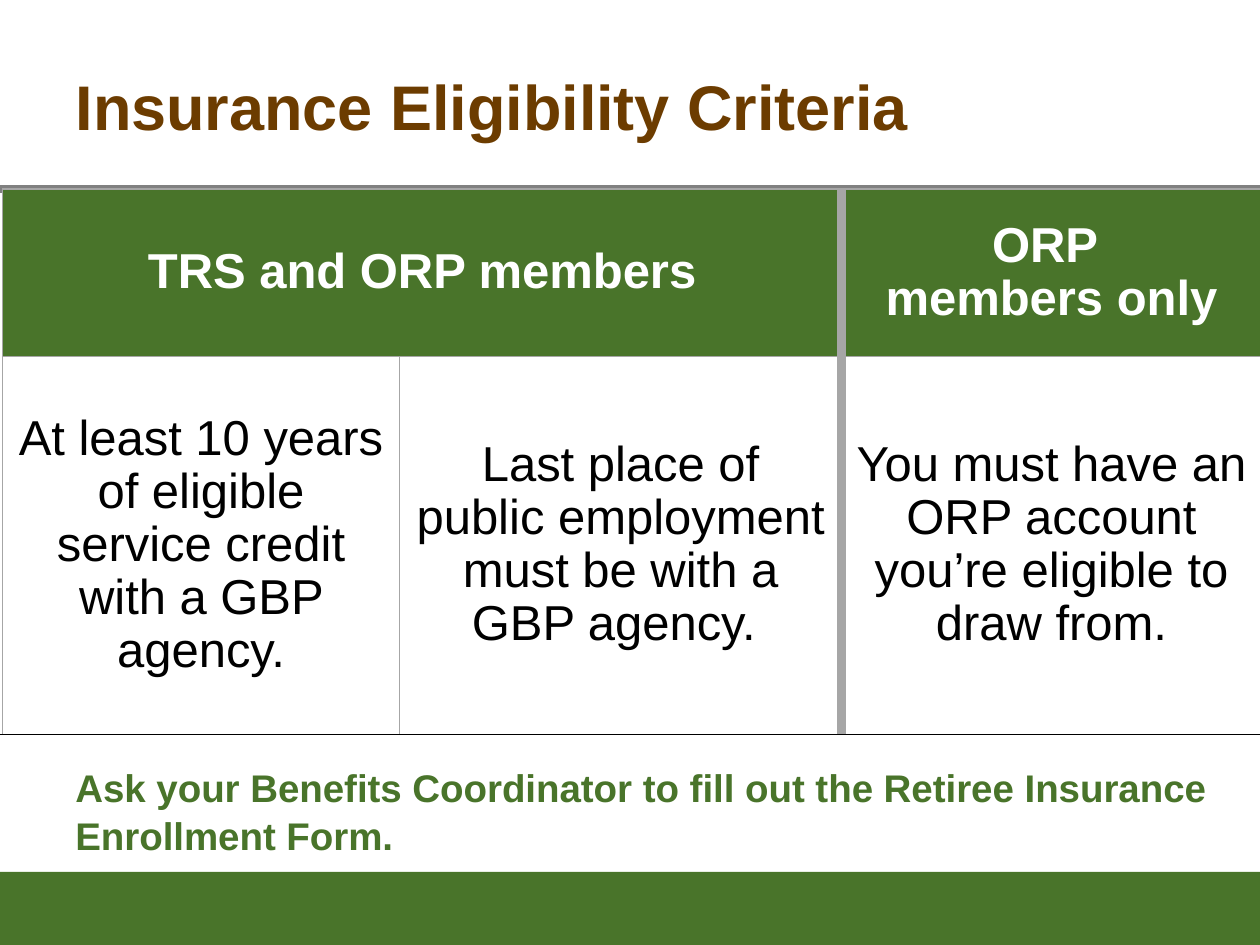
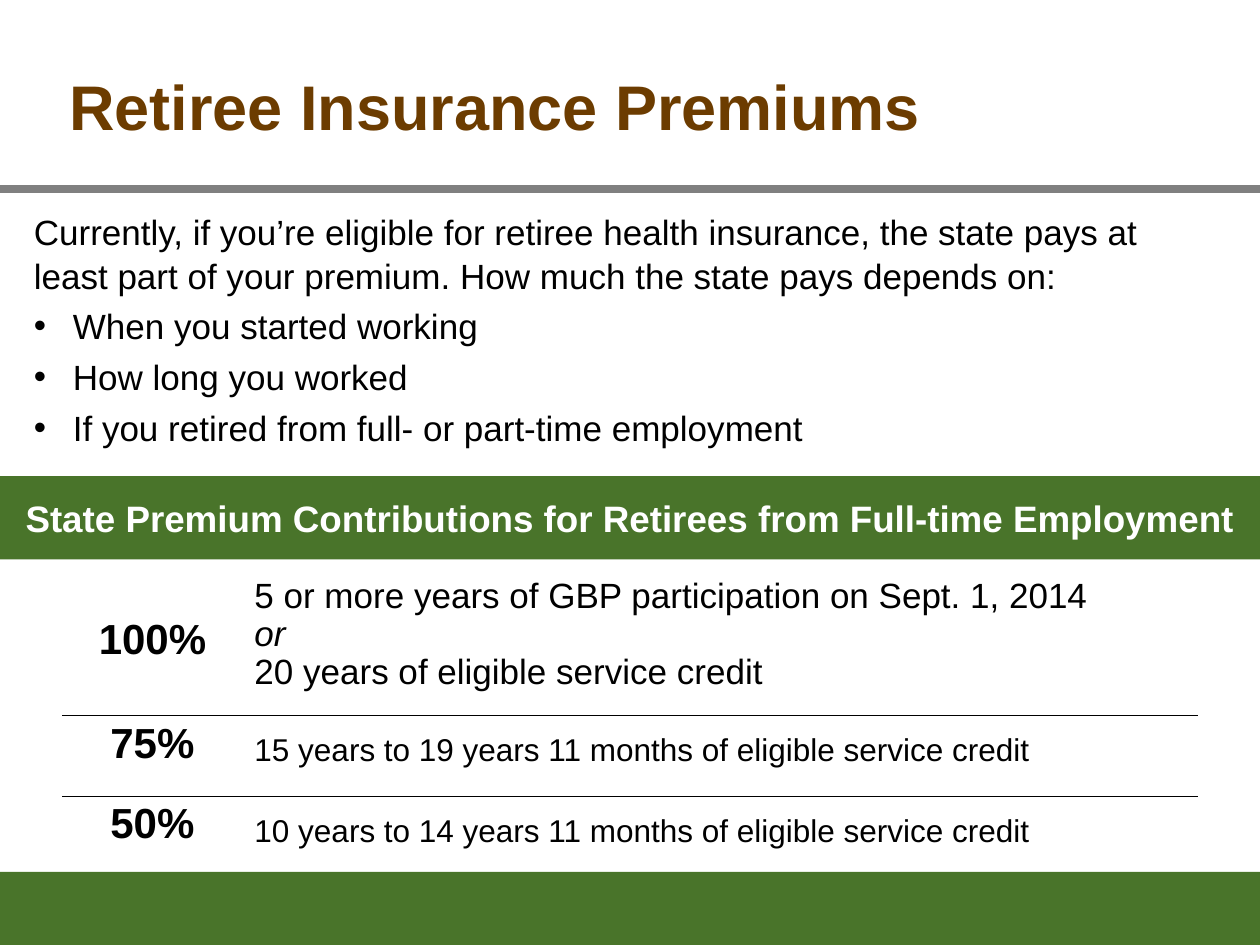
from lxml import etree
from pptx import Presentation
from pptx.dml.color import RGBColor
from pptx.enum.shapes import MSO_CONNECTOR, MSO_SHAPE
from pptx.enum.text import MSO_ANCHOR, MSO_AUTO_SIZE, PP_ALIGN
from pptx.oxml.ns import qn
from pptx.util import Inches, Pt

LEFT, CENTER = PP_ALIGN.LEFT, PP_ALIGN.CENTER
TOP, MIDDLE = MSO_ANCHOR.TOP, MSO_ANCHOR.MIDDLE
NO_FIT = MSO_AUTO_SIZE.NONE
RECTANGLE = MSO_SHAPE.RECTANGLE
STRAIGHT = MSO_CONNECTOR.STRAIGHT

FONT = "Arial"
GREEN, BROWN = "49742A", "6C3C00"
BLACK, WHITE = "000000", "FFFFFF"
RULE_GRAY, GRID_GRAY = "808080", "A6A6A6"
SLIDE_WIDTH, SLIDE_HEIGHT = 10, 7.5
FOOTER_TOP, HEADER_RULE_TOP = 6.92, 1.5
BODY_SPACING, TABLE_SPACING = 1.04, 0.97
BULLET_INDENT = 0.31


def color(value):
    return RGBColor.from_string(value)


def add_run(paragraph, text, size, shade, bold=False, italic=False):
    run = paragraph.add_run()
    run.text = text
    run.font.name = FONT
    run.font.size = Pt(size)
    run.font.bold = bold
    run.font.italic = italic
    run.font.color.rgb = color(shade)


def add_bullet(paragraph):
    properties = paragraph._p.get_or_add_pPr()
    properties.set("marL", str(Inches(BULLET_INDENT)))
    properties.set("indent", str(-Inches(BULLET_INDENT)))
    etree.SubElement(properties, qn("a:buFont")).set("typeface", FONT)
    etree.SubElement(properties, qn("a:buChar")).set("char", "•")


def add_title(slide, text, left):
    title = slide.shapes.title
    title.left, title.top = Inches(left), Inches(0.25)
    title.width, title.height = Inches(7.33), Inches(1.17)
    frame = title.text_frame
    frame.word_wrap = True
    frame.auto_size = NO_FIT
    frame.vertical_anchor = MIDDLE
    frame.paragraphs[0].alignment = LEFT
    add_run(frame.paragraphs[0], text, 36, BROWN, bold=True)


def add_band(slide, top, height):
    band = slide.shapes.add_shape(
        RECTANGLE, 0, Inches(top), Inches(SLIDE_WIDTH), Inches(height))
    band.shadow.inherit = False
    band.fill.solid()
    band.fill.fore_color.rgb = color(GREEN)
    band.line.fill.background()
    return band


def add_rule(slide, top, shade, weight):
    rule = slide.shapes.add_connector(
        STRAIGHT, 0, Inches(top), Inches(SLIDE_WIDTH), Inches(top))
    rule.line.color.rgb = color(shade)
    rule.line.width = Pt(weight)
    etree.SubElement(rule._element.spPr, qn("a:effectLst"))


def add_body(slide, place, lines, size, shade, bold=False):
    frame = slide.shapes.add_textbox(*map(Inches, place)).text_frame
    frame.word_wrap = True
    for index, (text, bulleted) in enumerate(lines):
        paragraph = frame.paragraphs[0] if index == 0 else frame.add_paragraph()
        paragraph.line_spacing = BODY_SPACING
        if index:
            paragraph.space_before = Pt(size * 0.2)
        if bulleted:
            add_bullet(paragraph)
        add_run(paragraph, text, size, shade, bold)


def add_grid(slide, place, columns, rows):
    table = slide.shapes.add_table(
        len(rows), len(columns), *map(Inches, place)).table
    table.first_row = table.horz_banding = False
    for column, width in zip(table.columns, columns):
        column.width = Inches(width)
    for row, height in zip(table.rows, rows):
        row.height = Inches(height)
    return table


def set_borders(cell, **edges):
    properties = cell._tc.get_or_add_tcPr()
    for index, side in enumerate(("left", "right", "top", "bottom")):
        shade, weight = edges[side]
        edge = etree.Element(qn("a:ln" + side[0].upper()), w=str(Pt(weight)))
        fill = etree.SubElement(edge, qn("a:solidFill"))
        etree.SubElement(fill, qn("a:srgbClr")).set("val", shade)
        properties.insert(index, edge)


def fill_cell(cell, lines, size, shade, fill=WHITE, bold=False,
              align=CENTER, anchor=MIDDLE, italics=()):
    cell.fill.solid()
    cell.fill.fore_color.rgb = color(fill)
    cell.vertical_anchor = anchor
    frame = cell.text_frame
    for index, text in enumerate(lines):
        paragraph = frame.paragraphs[0] if index == 0 else frame.add_paragraph()
        paragraph.alignment = align
        paragraph.line_spacing = TABLE_SPACING
        add_run(paragraph, text, size, shade, bold, text in italics)


def add_page(deck, title, title_left):
    slide = deck.slides.add_slide(deck.slide_layouts[5])
    add_title(slide, title, title_left)
    add_band(slide, FOOTER_TOP, SLIDE_HEIGHT - FOOTER_TOP)
    add_rule(slide, HEADER_RULE_TOP, RULE_GRAY, 4.5)
    return slide


def add_criteria_table(slide):
    criteria = add_grid(slide, (0.02, 1.5, 9.98, 4.33),
                        (3.15, 3.51, 3.33), (1.33, 3))
    headings = {0: ["TRS and ORP members"], 2: ["ORP ", "members only"]}
    conditions = (
        "At least 10 years of eligible service credit with a GBP agency.",
        "Last place of public employment must be with a GBP agency. ",
        "You must have an ORP account you’re eligible to draw from.",
    )
    criteria.cell(0, 0).merge(criteria.cell(0, 1))
    for column, heading in headings.items():
        fill_cell(criteria.cell(0, column), heading, 28, WHITE, GREEN, bold=True)
    for column, condition in enumerate(conditions):
        fill_cell(criteria.cell(1, column), [condition], 28, BLACK)

    thin, divider = (GRID_GRAY, 1), (GRID_GRAY, 6)
    for row in range(2):
        for column in range(3):
            spans_to_divider = column == 1 or (row, column) == (0, 0)
            set_borders(criteria.cell(row, column), top=thin, bottom=thin,
                        left=divider if column == 2 else thin,
                        right=divider if spans_to_divider else thin)


def add_contribution_table(slide):
    contributions = (
        ("100%", ["5 or more years of GBP participation on Sept. 1, 2014",
                  "or", "20 years of eligible service credit"], 20, MIDDLE, 0.1),
        ("75%", ["15 years to 19 years 11 months of eligible service credit"],
         18, TOP, 0.15),
        ("50%", ["10 years to 14 years 11 months of eligible service credit"],
         18, TOP, 0.15),
    )
    table = add_grid(slide, (0.5, 4.49, 9, 2.43), (1.42, 7.58),
                     (1.19, 0.64, 0.59))
    hidden, separator = (WHITE, 1), (BLACK, 1)
    last = len(contributions) - 1
    for row, (share, service, size, anchor, inset) in enumerate(contributions):
        share_cell, service_cell = table.cell(row, 0), table.cell(row, 1)
        fill_cell(share_cell, [share], 24, BLACK, bold=True, anchor=anchor)
        fill_cell(service_cell, service, size, BLACK, align=LEFT,
                  anchor=TOP, italics=("or",))
        service_cell.margin_top = Inches(inset)
        service_cell.margin_bottom = Inches(0.1)
        for cell in (share_cell, service_cell):
            set_borders(cell, left=hidden, right=hidden,
                        top=separator if row else hidden,
                        bottom=separator if row < last else hidden)


def build_eligibility(deck):
    slide = add_page(deck, "Insurance Eligibility Criteria", 0.5)
    add_criteria_table(slide)
    reminder = ("Ask your Benefits Coordinator to fill out the Retiree "
                "Insurance Enrollment Form.")
    add_body(slide, (0.5, 6, 9.33, 0.79), [(reminder, False)], 22, GREEN, bold=True)
    add_rule(slide, 5.83, BLACK, 0.75)


def build_premiums(deck):
    slide = add_page(deck, "Retiree Insurance Premiums", 0.45)
    add_body(slide, (0.17, 1.61, 9.58, 1.97), [
        ("Currently, if you’re eligible for retiree health insurance, the state "
         "pays at least part of your premium. How much the state pays depends on:",
         False),
        ("When you started working", True),
        ("How long you worked", True),
        ("If you retired from full- or part-time employment", True),
    ], 20, BLACK)
    frame = add_band(slide, 3.78, 0.66).text_frame
    frame.word_wrap = True
    frame.vertical_anchor = MIDDLE
    frame.paragraphs[0].alignment = CENTER
    add_run(frame.paragraphs[0],
            "State Premium Contributions for Retirees from Full-time Employment",
            21, WHITE, bold=True)
    add_contribution_table(slide)


def main():
    deck = Presentation()
    deck.slide_width = Inches(SLIDE_WIDTH)
    deck.slide_height = Inches(SLIDE_HEIGHT)
    build_eligibility(deck)
    build_premiums(deck)
    deck.save("out.pptx")


if __name__ == "__main__":
    main()
